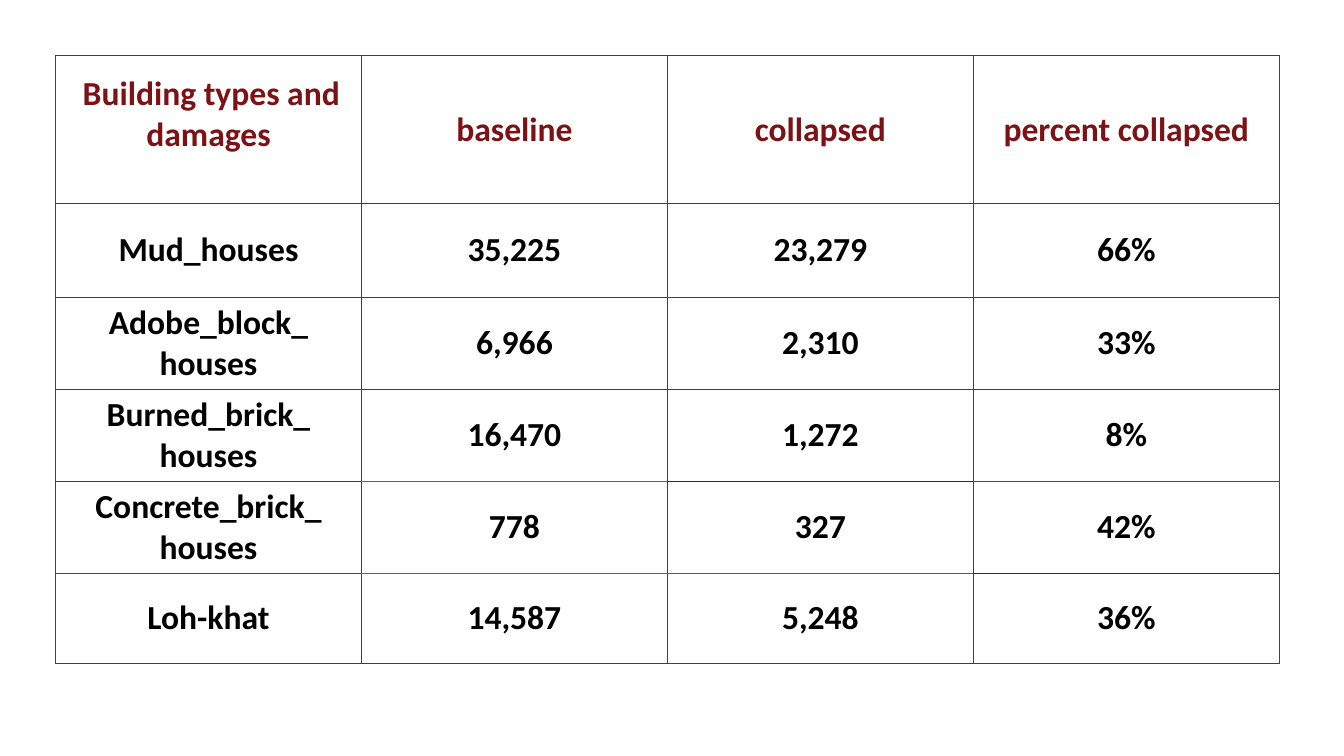
from lxml.etree import SubElement
from pptx import Presentation
from pptx.dml.color import RGBColor
from pptx.enum.text import MSO_ANCHOR, PP_ALIGN
from pptx.oxml.ns import qn
from pptx.util import Cm, Pt

INK, HEADING, GRID = "000000", "7E1115", "404040"
ROWS = [
    ["Building types and damages", "baseline", "collapsed", "percent collapsed"],
    ["Mud_houses", "35,225", "23,279", "66%"],
    ["Adobe_block_ houses", "6,966", "2,310", "33%"],
    ["Burned_brick_ houses", "16,470", "1,272", "8%"],
    ["Concrete_brick_ houses", "778", "327", "42%"],
    ["Loh-khat", "14,587", "5,248", "36%"],
]
HEIGHTS = [3.73, 2.36] + [2.26] * 4
COL_WIDTH = 7.71
# Coloured rules below these rows, one colour per column
RULES = {
    3: ["4020D0", "C021D0", "0022D0", "6024D0"],
    4: ["601ED0", "C01ED0", "A01ED0", "201ED0"],
}


def add_run(p, text, size, color, bold):
    r = p.add_run()
    r.text = text
    font = {"name": "Calibri", "size": Pt(size), "bold": bold}
    for name, value in font.items():
        setattr(r.font, name, value)
    r.font.color.rgb = RGBColor.from_string(color)


def set_border(cell, side, color, width):
    tcPr = cell._tc.get_or_add_tcPr()
    ln = SubElement(tcPr, qn(f"a:ln{side}"), w=str(Pt(width)))
    fill = SubElement(ln, qn("a:solidFill"))
    SubElement(fill, qn("a:srgbClr"), val=color)


prs = Presentation()
prs.slide_width, prs.slide_height = Cm(33.87), Cm(19.05)
s = prs.slides.add_slide(prs.slide_layouts[6])

table = s.shapes.add_table(
    len(ROWS), len(ROWS[0]), Cm(1.4), Cm(1.4),
    Cm(COL_WIDTH * len(ROWS[0])), Cm(sum(HEIGHTS))).table
table.horz_banding = False
for col in table.columns:
    col.width = Cm(COL_WIDTH)
for row, height in zip(table.rows, HEIGHTS):
    row.height = Cm(height)

for i, texts in enumerate(ROWS):
    for j, text in enumerate(texts):
        cell = table.cell(i, j)
        cell.vertical_anchor = MSO_ANCHOR.MIDDLE
        p = cell.text_frame.paragraphs[0]
        p.alignment = PP_ALIGN.CENTER
        if i == j == 0:
            cell.margin_bottom = Cm(0.89)
            add_run(p, " ", 18, INK, False)
        add_run(p, text, 24, INK if i else HEADING, True)

        rules = {"T": RULES.get(i - 1), "B": RULES.get(i)}
        for side in "LRTB":
            colors = rules.get(side)
            if colors:
                set_border(cell, side, colors[j], 1)
            else:
                set_border(cell, side, GRID, 0.5)
        cell.fill.background()

prs.save("out.pptx")
